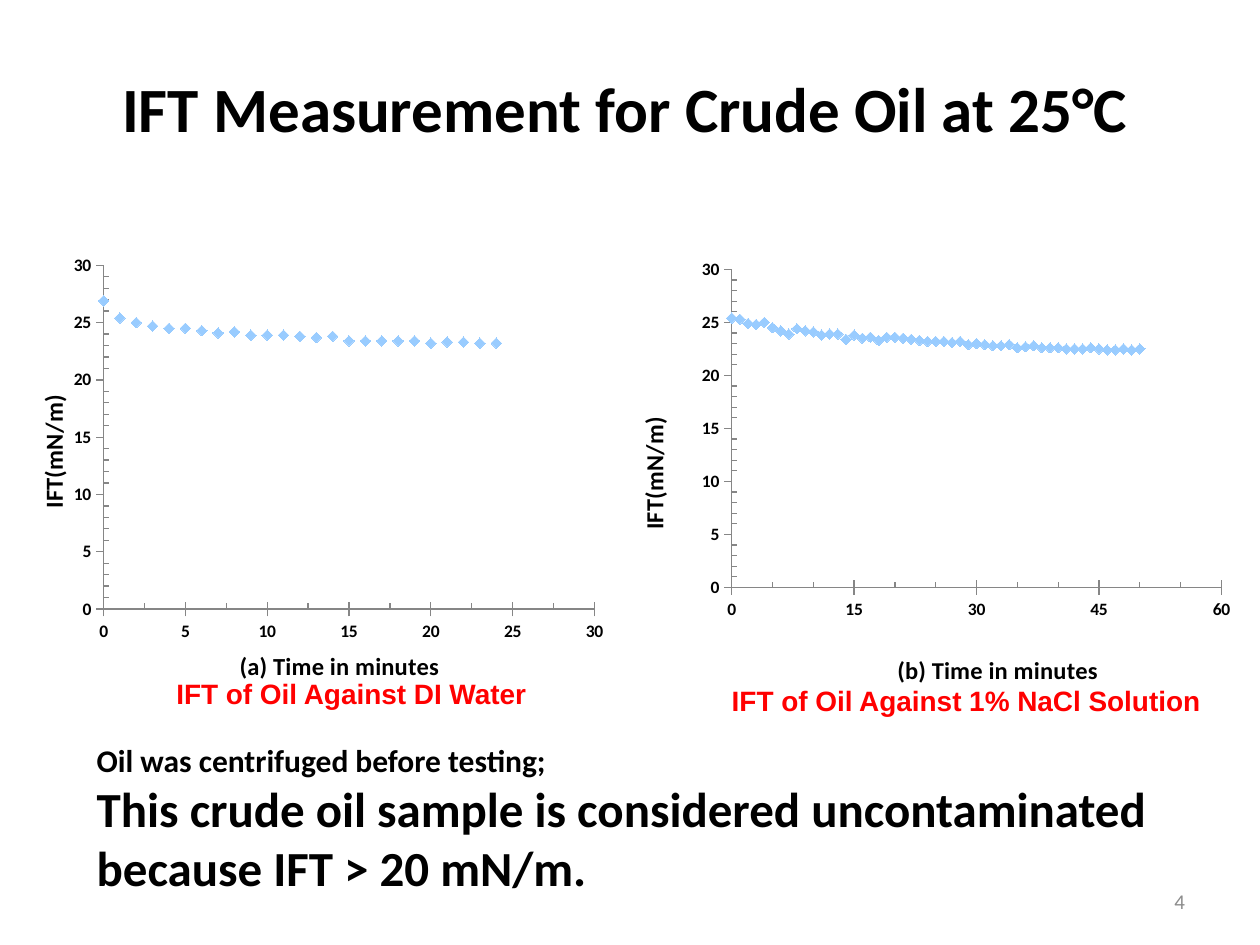
from lxml import etree
from pptx import Presentation
from pptx.chart.data import XyChartData
from pptx.dml.color import RGBColor
from pptx.enum.chart import XL_CHART_TYPE, XL_MARKER_STYLE, XL_TICK_MARK
from pptx.enum.text import MSO_ANCHOR, MSO_AUTO_SIZE, PP_ALIGN
from pptx.oxml.ns import qn
from pptx.util import Cm, Pt

SCATTER = XL_CHART_TYPE.XY_SCATTER
DIAMOND = XL_MARKER_STYLE.DIAMOND
CROSS, OUT, IN = XL_TICK_MARK.CROSS, XL_TICK_MARK.OUTSIDE, XL_TICK_MARK.INSIDE
LEFT, MID, RIGHT = PP_ALIGN.LEFT, PP_ALIGN.CENTER, PP_ALIGN.RIGHT
TOP, CENTER = MSO_ANCHOR.TOP, MSO_ANCHOR.MIDDLE
FIXED = MSO_AUTO_SIZE.NONE

BLACK = RGBColor(0, 0, 0)
RED = RGBColor(0xFF, 0, 0)
GRAY = RGBColor(0x8C, 0x8C, 0x8C)
AXIS = RGBColor(0x86, 0x86, 0x86)
SKY = RGBColor(0x99, 0xCC, 0xFF)

# IFT readings, one a minute
WATER = [26.9, 25.4, 25, 24.7, 24.5, 24.5, 24.3, 24.1, 24.2, 23.9, 23.9, 23.9,
         23.8, 23.7, 23.8, 23.4, 23.4, 23.4, 23.4, 23.4, 23.2, 23.3, 23.3,
         23.2, 23.2]
BRINE = [25.4, 25.3, 24.9, 24.8, 25, 24.5, 24.2, 23.9, 24.4, 24.2, 24.1, 23.8,
         23.9, 23.9, 23.4, 23.8, 23.5, 23.6, 23.3, 23.6, 23.6, 23.5, 23.4,
         23.3, 23.2, 23.2, 23.2, 23.1, 23.2, 22.9, 23, 22.9, 22.8, 22.8, 22.9,
         22.6, 22.7, 22.8, 22.6, 22.6, 22.6, 22.5, 22.5, 22.5, 22.6, 22.5,
         22.4, 22.4, 22.5, 22.4, 22.5]


def place(node, spot, index, inner=False):
    """Give a chart part a manual layout, in fractions of the chart."""
    for old in node.findall(qn("c:layout")):
        node.remove(old)
    layout = etree.Element(qn("c:layout"))
    manual = etree.SubElement(layout, qn("c:manualLayout"))
    marks = [("layoutTarget", "inner")] if inner else []
    marks += [("xMode", "edge"), ("yMode", "edge"), *zip("xywh", spot)]
    for tag, val in marks:
        etree.SubElement(manual, qn(f"c:{tag}")).set("val", str(val))
    node.insert(index, layout)


class Deck:
    body, label = "Calibri", "Arial"

    def __init__(self):
        self.prs = Presentation()
        self.prs.slide_width, self.prs.slide_height = Cm(25.4), Cm(19.05)
        self.slide = self.prs.slides.add_slide(self.prs.slide_layouts[5])

    def style(self, font, size, color=BLACK, bold=True, name=body):
        font.name, font.size, font.bold = name, Pt(size), bold
        font.color.rgb = color

    def title(self, box, text, size):
        shape = self.slide.shapes.title
        shape.left, shape.top, shape.width, shape.height = map(Cm, box)
        frame = shape.text_frame
        frame.text, frame.auto_size = text, FIXED
        self.style(frame.paragraphs[0].font, size)

    def text(self, box, lines, align=LEFT, anchor=TOP, **look):
        frame = self.slide.shapes.add_textbox(*map(Cm, box)).text_frame
        frame.word_wrap, frame.vertical_anchor = True, anchor
        frame.text = "\n".join(text for text, _ in lines)
        for para, (_, size) in zip(frame.paragraphs, lines):
            para.alignment = align
            self.style(para.font, size, **look)

    def axis(self, axis, name, top, major, minor, tick):
        axis.minimum_scale, axis.maximum_scale = 0, top
        axis.major_unit, axis.minor_unit = major, minor
        axis.major_tick_mark, axis.minor_tick_mark = tick, IN
        axis.has_major_gridlines = False
        axis.format.line.color.rgb = AXIS
        self.style(axis.tick_labels.font, 10)
        axis.tick_labels.number_format = "General"
        axis.tick_labels.number_format_is_linked = False
        frame = axis.axis_title.text_frame
        frame.text = name
        self.style(frame.paragraphs[0].font, 14)

    def chart(self, box, vals, name, top, major, plot, spots):
        data = XyChartData()
        points = data.add_series("Series 1")
        for time, val in enumerate(vals):
            points.add_data_point(time, val)
        chart = self.slide.shapes.add_chart(SCATTER, *map(Cm, box), data).chart
        chart.has_legend = chart.has_title = False
        self.style(chart.font, 10, bold=False)
        self.axis(chart.category_axis, name, top, major, top / 12, CROSS)
        self.axis(chart.value_axis, "IFT(mN/m)", 30, 5, 1, OUT)
        # Markers only
        chart.plots[0].vary_by_categories = False
        series = chart.plots[0].series[0]
        series.smooth = False
        series.format.line.fill.background()
        mark = series.marker
        mark.style, mark.size = DIAMOND, 6
        mark.format.fill.solid()
        mark.format.fill.fore_color.rgb = SKY
        mark.format.line.fill.background()
        # Plot and axis title positions
        area = chart._chartSpace.find(".//" + qn("c:plotArea"))
        place(area, plot, 0, inner=True)
        for node, spot in zip(area.iter(qn("c:title")), spots):
            place(node, spot, 1)


def main():
    deck = Deck()
    deck.title((1.7, 1.27, 21.8, 1.8),
               "IFT Measurement for Crude Oil at 25°C", 36)

    # Charts with captions
    deck.chart((0.64, 5.08, 12.07, 9), WATER, "(a) Time in minutes", 30, 5,
               (0.12, 0.03, 0.82, 0.77), [(0.34, 0.88), (0, 0.31)])
    deck.chart((12.5, 5.08, 12.5, 8.89), BRINE, "(b) Time in minutes", 60, 15,
               (0.18, 0.04, 0.79, 0.73), [(0.44, 0.91), (0.02, 0.37)])
    for box, text in (
            ((2.74, 13.51, 8.69, 0.94), "IFT of Oil Against DI Water"),
            ((14.4, 13.64, 10.16, 0.94), "IFT of Oil Against 1% NaCl Solution")):
        deck.text(box, [(text, 16)], MID, CENTER, color=RED, name=deck.label)

    # Finding and page number
    deck.text((1.7, 14.81, 22.66, 3.43), [
        ("Oil was centrifuged before testing;", 18),
        ("This crude oil sample is considered uncontaminated "
         "because IFT > 20 mN/m.", 28)])
    deck.text((18.21, 17.65, 5.93, 1.02), [("4", 12)], RIGHT, CENTER,
              color=GRAY, bold=False)
    deck.prs.save("out.pptx")


if __name__ == "__main__":
    main()
